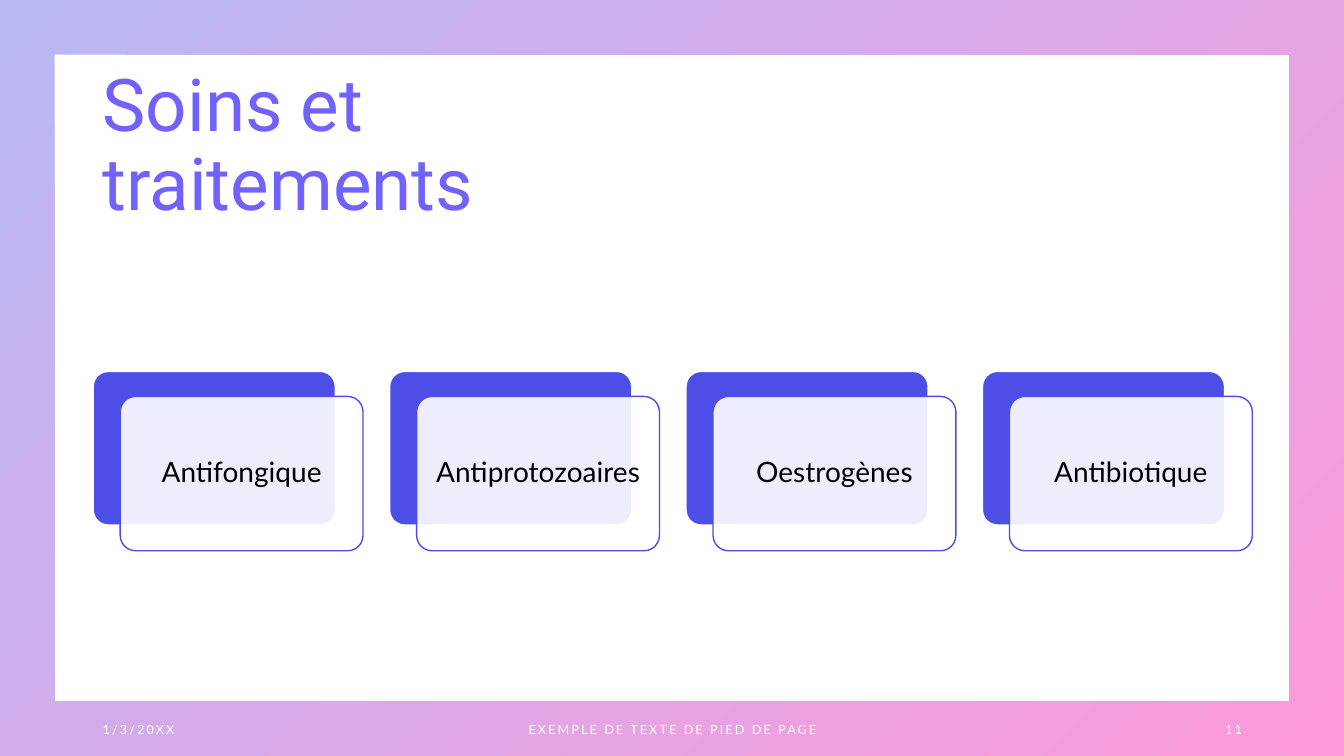
"""Build the treatments slide: framed title, four layered cards and a footer."""
from dataclasses import dataclass

from lxml.etree import SubElement
from pptx import Presentation
from pptx.dml.color import RGBColor as Rgb
from pptx.enum.shapes import MSO_SHAPE as Kind
from pptx.enum.text import MSO_ANCHOR as Anchor, PP_ALIGN as Align
from pptx.oxml.ns import qn
from pptx.shapes.autoshape import Shape
from pptx.slide import Slide
from pptx.util import Cm, Pt

HUES = {
    "blue": "4D4EE6",
    "violet": "7162FE",
    "white": "FFFFFF",
    "black": "000000",
    "sky": "B8B8F5",
    "pink": "FD99D9",
}
WIDE, HIGH = 33.87, 19.05
LEFT, TOP, STEP = 2.34, 9.35, 7.47
SHIFT_X, SHIFT_Y = 0.69, 0.64


@dataclass
class Box:
    x: float
    y: float
    w: float
    h: float

    def cm(self) -> tuple[Cm, Cm, Cm, Cm]:
        return Cm(self.x), Cm(self.y), Cm(self.w), Cm(self.h)


@dataclass
class Style:
    face: str
    size: float
    hue: str
    align: Align = Align.LEFT
    after: float = 0
    lead: float = 1.0
    track: float = 0


@dataclass
class Label:
    text: str
    box: Box
    style: Style


CARDS = ["Antifongique", "Antiprotozoaires", "Oestrogènes", "Antibiotique"]
WORD = Style("Lato", 20, "black", Align.CENTER, after=7, lead=0.9)


def foot(align: Align) -> Style:
    return Style("Lato", 9, "white", align, after=6, track=1.5)


LABELS = [
    Label("Soins et traitements", Box(LEFT, 1.88, 16.48, 3.68),
          Style("Roboto", 52, "violet", lead=0.9)),
    Label("1/3/20XX", Box(LEFT, 17.86, 7.62, 1.02), foot(Align.LEFT)),
    Label("EXEMPLE DE TEXTE DE PIED DE PAGE", Box(11.23, 17.86, 11.43, 1.02),
          foot(Align.CENTER)),
    Label("11", Box(23.93, 17.86, 7.62, 1.02), foot(Align.RIGHT)),
]


def color(name: str) -> Rgb:
    return Rgb.from_string(HUES[name])


def write(shape: Shape, text: str, style: Style) -> None:
    frame = shape.text_frame
    frame.word_wrap = True
    frame.vertical_anchor = Anchor.MIDDLE
    par = frame.paragraphs[0]
    par.text = text
    par.alignment = style.align
    par.line_spacing = style.lead
    par.space_after = Pt(style.after)
    font = par.font
    font.name, font.size = style.face, Pt(style.size)
    font.color.rgb = color(style.hue)
    if style.track:
        props = par._p.pPr.find(qn("a:defRPr"))
        props.set("spc", str(int(style.track * 100)))


def border(slide: Slide) -> None:
    shape = slide.shapes.add_shape(Kind.FRAME, *Box(0, 0, WIDE, HIGH).cm())
    shape.shadow.inherit = False
    shape.adjustments[0] = 0.072
    shape.line.fill.background()
    shape.fill.gradient()
    shape.fill.gradient_angle = 315
    for stop, name in zip(shape.fill.gradient_stops, ("sky", "pink")):
        stop.color.rgb = color(name)


def panel(slide: Slide, box: Box, fill: str, line: str, width: float) -> Shape:
    shape = slide.shapes.add_shape(Kind.ROUNDED_RECTANGLE, *box.cm())
    shape.shadow.inherit = False
    shape.adjustments[0] = 0.1
    shape.fill.solid()
    shape.fill.fore_color.rgb = color(fill)
    shape.line.color.rgb = color(line)
    shape.line.width = Pt(width)
    return shape


def card(slide: Slide, x: float, text: str) -> None:
    back = Box(x, TOP, 6.12, 3.89)
    panel(slide, back, "blue", "white", 1.5)
    over = Box(x + SHIFT_X, TOP + SHIFT_Y, back.w, back.h)
    front = panel(slide, over, "white", "blue", 1)
    tint = front._element.spPr.find(f"{qn('a:solidFill')}/{qn('a:srgbClr')}")
    SubElement(tint, qn("a:alpha"), val="90000")
    frame = front.text_frame
    frame.margin_left = frame.margin_right = Cm(0.3)
    frame.margin_top = frame.margin_bottom = Cm(0.3)
    write(front, text, WORD)


def main() -> None:
    deck = Presentation()
    deck.slide_width, deck.slide_height = Cm(WIDE), Cm(HIGH)
    slide = deck.slides.add_slide(deck.slide_layouts[6])
    border(slide)
    for label in LABELS:
        write(slide.shapes.add_textbox(*label.box.cm()), label.text, label.style)
    for i, text in enumerate(CARDS):
        card(slide, LEFT + i * STEP, text)
    deck.save("out.pptx")


if __name__ == "__main__":
    main()
